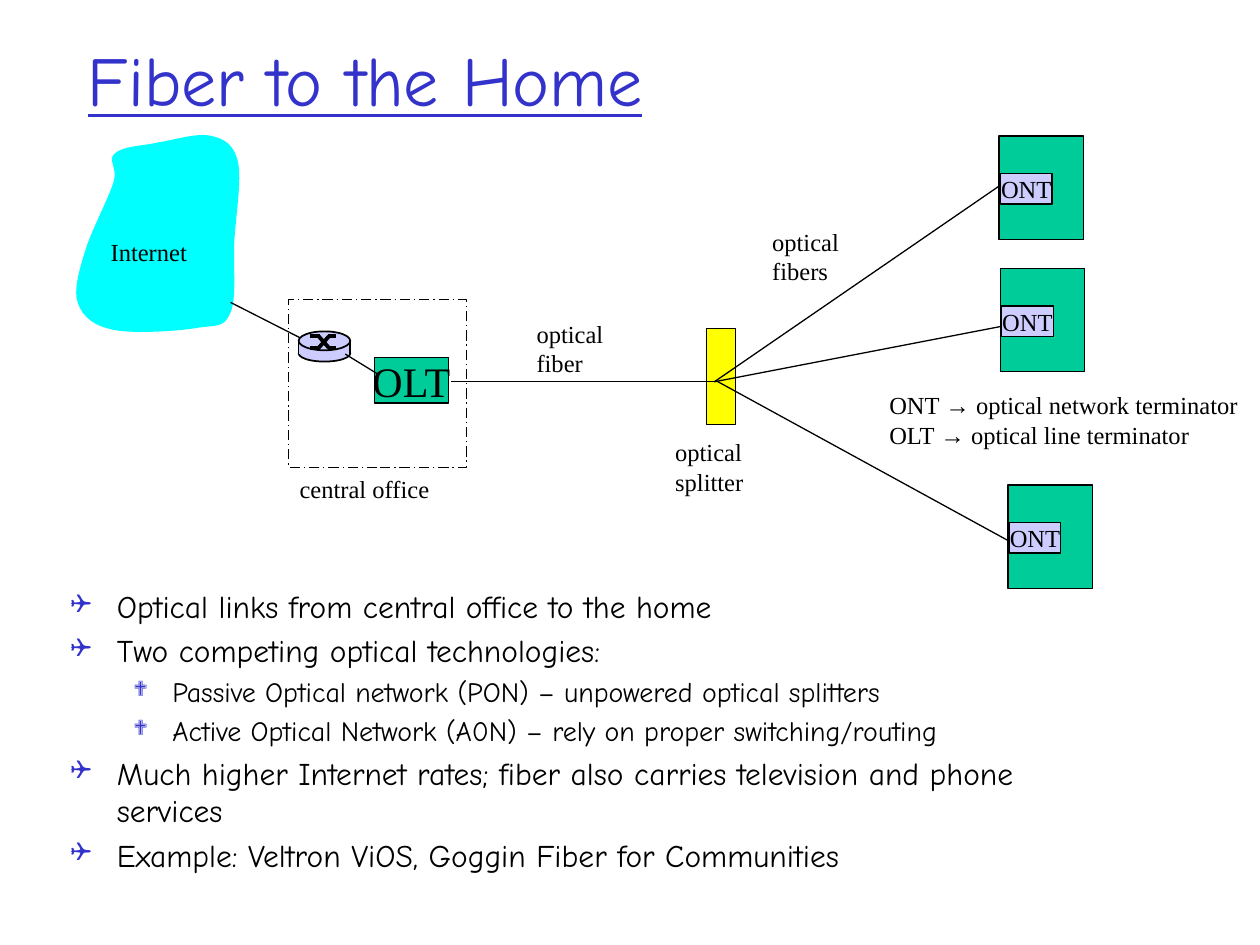
"""Build the Fiber to the Home slide with its access network diagram."""
from dataclasses import dataclass
from itertools import chain

from lxml import etree
from pptx import Presentation
from pptx import util as u
from pptx.dml.color import RGBColor
from pptx.enum import dml, shapes, text
from pptx.oxml.ns import qn


@dataclass(frozen=True)
class Theme:
    accent: str = "3333CC"
    ink: str = "000000"
    green: str = "00CC99"
    lilac: str = "CCCCFF"
    yellow: str = "FFFF00"
    cyan: str = "00FFFF"
    heading_font: str = "Comic Neue"
    label_font: str = "Times New Roman"
    bullet_font: str = "Wingdings"
    title_size: int = 40
    olt_size: int = 24
    label_size: int = 14
    thin: float = 0.75
    outline: float = 1
    bold: float = 2.25


THEME = Theme()

TITLE = "Fiber to the Home"
BULLETS = [
    (0, "Optical links from central office to the home"),
    (0, "Two competing optical technologies:"),
    (1, "Passive Optical network (PON) – unpowered optical splitters"),
    (1, "Active Optical Network (A0N) – rely on proper switching/routing"),
    (0, "Much higher Internet rates; fiber also carries television and phone services"),
    (0, "Example: Veltron ViOS, Goggin Fiber for Communities"),
]
LEVELS = [
    {"size": 18, "margin": 0.37, "hanging": 0.37, "char": "❑", "percent": 85},
    {"size": 16, "margin": 0.81, "hanging": 0.31, "char": "❖", "percent": 75},
]
LABELS = [
    ("central office", (2.28, 3.71, 1.47, 0.33)),
    ("optical\nsplitter", (5.26, 3.42, 0.89, 0.57)),
    ("optical\nfiber", (4.16, 2.48, 0.81, 0.57)),
    ("optical\nfibers", (6.03, 1.75, 0.81, 0.57)),
    ("Internet", (0.78, 1.83, 1, 0.33)),
    ("ONT → optical network terminator\nOLT → optical line terminator",
     (6.96, 3.05, 3.04, 0.57)),
]
HOMES = [(7.93, 1.08), (7.94, 2.13), (8, 3.85)]
SPLITTER_HUB = (5.67, 3.03)
FIBERS = [
    ((3.58, 3.03), SPLITTER_HUB),
    (SPLITTER_HUB, (7.94, 1.47)),
    (SPLITTER_HUB, (7.95, 2.59)),
    ((5.68, 3.02), (8, 4.29)),
]
OFFICE_LINKS = [((2.74, 2.81), (3, 2.97)), ((1.83, 2.4), (2.38, 2.68))]
ROUTER_SIDES = [((x, 2.7), (x, 2.81)) for x in (2.37, 2.78)]
ROUTER_CROSS = [
    segment
    for near, far in ((2.67, 2.76), (2.76, 2.67))
    for segment in (((2.46, near), (2.54, near)), ((2.53, near), (2.61, far)),
                    ((2.6, far), (2.67, far)))
]
CLOUD_START = (1.89, 1.29)
CLOUD_CURVES = [
    ((1.86, 1.15), (1.78, 1.1), (1.68, 1.08)),
    ((1.57, 1.05), (1.39, 1.11), (1.26, 1.13)),
    ((1.13, 1.16), (0.97, 1.16), (0.91, 1.22)),
    ((0.85, 1.27), (0.94, 1.33), (0.9, 1.45)),
    ((0.86, 1.58), (0.73, 1.82), (0.68, 1.98)),
    ((0.63, 2.14), (0.58, 2.31), (0.62, 2.41)),
    ((0.66, 2.52), (0.75, 2.59), (0.91, 2.62)),
    ((1.06, 2.65), (1.42, 2.63), (1.58, 2.6)),
    ((1.73, 2.58), (1.78, 2.6), (1.83, 2.48)),
    ((1.88, 2.37), (1.85, 2.12), (1.86, 1.92)),
    ((1.87, 1.73), (1.92, 1.43), CLOUD_START),
]


def write_text(paragraph, content, *, size=THEME.label_size, font=THEME.label_font,
               color=THEME.ink, underline=None, align=text.PP_ALIGN.LEFT):
    paragraph.alignment = align
    run = paragraph.add_run()
    run.text = content
    run.font.size = u.Pt(size)
    run.font.name = font
    run.font.underline = underline
    run.font.color.rgb = RGBColor.from_string(color)


def add_frame(slide, box, wrap=False):
    frame = slide.shapes.add_textbox(*map(u.Inches, box)).text_frame
    frame.word_wrap = wrap
    return frame


def style_shape(shape, fill, width):
    shape.shadow.inherit = False
    if fill:
        shape.fill.solid()
        shape.fill.fore_color.rgb = RGBColor.from_string(fill)
    else:
        shape.fill.background()
    if width:
        shape.line.color.rgb = RGBColor.from_string(THEME.ink)
        shape.line.width = u.Pt(width)
    else:
        shape.line.fill.background()


def add_box(slide, box, fill=None, width=THEME.thin, label=None,
            kind=shapes.MSO_SHAPE.RECTANGLE, **text_format):
    shape = slide.shapes.add_shape(kind, *map(u.Inches, box))
    style_shape(shape, fill, width)
    if label:
        frame = shape.text_frame
        frame.word_wrap = False
        frame.vertical_anchor = text.MSO_ANCHOR.MIDDLE
        write_text(frame.paragraphs[0], label, align=text.PP_ALIGN.CENTER, **text_format)
    return shape


def add_line(slide, start, end, width=THEME.thin):
    line = slide.shapes.add_connector(
        shapes.MSO_CONNECTOR.STRAIGHT, *map(u.Inches, (*start, *end)))
    line.line.color.rgb = RGBColor.from_string(THEME.ink)
    line.line.width = u.Pt(width)
    etree.SubElement(line._element.spPr, qn("a:effectLst"))


def add_cloud(slide):
    builder = slide.shapes.build_freeform(*map(u.Inches, CLOUD_START))
    builder.add_line_segments(
        [tuple(map(u.Inches, point)) for point in chain.from_iterable(CLOUD_CURVES)])
    cloud = builder.convert_to_shape()
    style_shape(cloud, THEME.cyan, None)
    segments = list(cloud._element.iter(qn("a:lnTo")))
    outline = segments[0].getparent()
    for first in range(0, len(segments), 3):
        curve = etree.SubElement(outline, qn("a:cubicBezTo"))
        for segment in segments[first:first + 3]:
            curve.append(segment[0])
            outline.remove(segment)
    etree.SubElement(outline, qn("a:close"))


def add_router(slide):
    oval = shapes.MSO_SHAPE.OVAL
    add_box(slide, (2.37, 2.74, 0.41, 0.13), THEME.lilac, THEME.outline, kind=oval)
    add_box(slide, (2.37, 2.73, 0.4, 0.08), THEME.lilac, None)
    add_box(slide, (2.37, 2.63, 0.41, 0.15), THEME.lilac, THEME.outline, kind=oval)
    for start, end in ROUTER_SIDES:
        add_line(slide, start, end, THEME.outline)
    for start, end in ROUTER_CROSS:
        add_line(slide, start, end, THEME.bold)


def add_bullet(paragraph, level, content):
    style = LEVELS[level]
    paragraph.level = level
    paragraph.space_before = u.Pt(0.2 * style["size"])
    write_text(paragraph, content, size=style["size"], font=THEME.heading_font)
    properties = paragraph._p.get_or_add_pPr()
    properties.set("marL", str(u.Inches(style["margin"])))
    properties.set("indent", str(-u.Inches(style["hanging"])))
    color = etree.SubElement(properties, qn("a:buClr"))
    etree.SubElement(color, qn("a:srgbClr"), val=THEME.accent)
    etree.SubElement(properties, qn("a:buSzPct"), val=str(style["percent"] * 1000))
    etree.SubElement(properties, qn("a:buFont"), typeface=THEME.bullet_font)
    etree.SubElement(properties, qn("a:buChar"), char=style["char"])


def add_diagram(slide):
    add_box(slide, (5.61, 2.61, 0.23, 0.76), THEME.yellow)
    for left, top in HOMES:
        add_box(slide, (left, top, 0.67, 0.82), THEME.green)
        add_box(slide, (left + 0.01, top + 0.3, 0.41, 0.24), THEME.lilac, label="ONT")
    office = add_box(slide, (2.29, 2.38, 1.41, 1.33))
    office.line.dash_style = dml.MSO_LINE.LONG_DASH_DOT
    add_box(slide, (2.97, 2.84, 0.59, 0.36), THEME.green, label="OLT", size=THEME.olt_size)
    add_router(slide)
    add_cloud(slide)
    for start, end in FIBERS + OFFICE_LINKS:
        add_line(slide, start, end)
    for content, box in LABELS:
        frame = add_frame(slide, box)
        for index, line in enumerate(content.split("\n")):
            write_text(frame.add_paragraph() if index else frame.paragraphs[0], line)


def main():
    presentation = Presentation()
    presentation.slide_width, presentation.slide_height = u.Inches(10), u.Inches(7.5)
    slide = presentation.slides.add_slide(presentation.slide_layouts[6])
    add_diagram(slide)
    title = add_frame(slide, (0.6, 0, 8.5, 1.25), wrap=True)
    title.vertical_anchor = text.MSO_ANCHOR.MIDDLE
    write_text(title.paragraphs[0], TITLE, size=THEME.title_size,
               font=THEME.heading_font, color=THEME.accent, underline=True)
    body = add_frame(slide, (0.46, 4.61, 8.5, 2.28), wrap=True)
    for index, (level, content) in enumerate(BULLETS):
        add_bullet(body.add_paragraph() if index else body.paragraphs[0], level, content)
    presentation.save("out.pptx")


if __name__ == "__main__":
    main()
